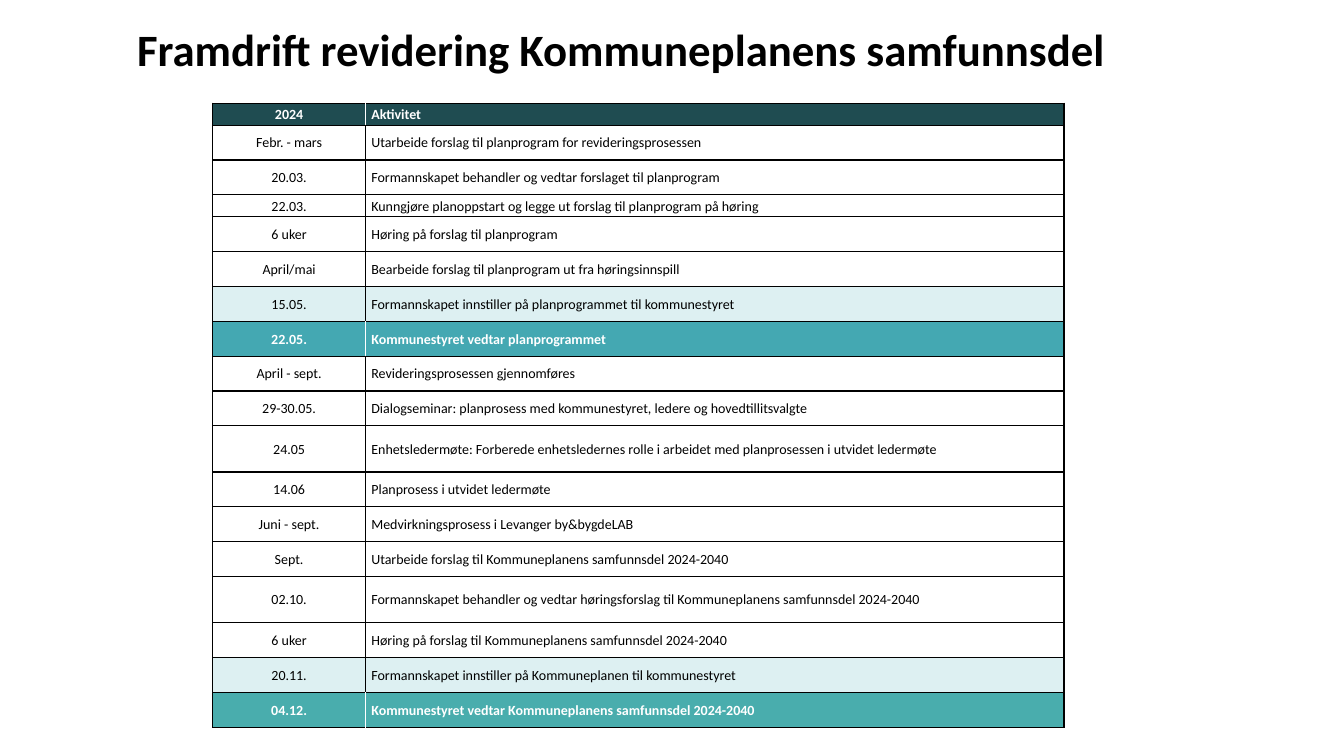
"""Builds a slide with the 2024 schedule for revising the municipal plan."""
from lxml import etree
from pptx import Presentation
from pptx.dml.color import RGBColor
from pptx.enum.text import MSO_ANCHOR, PP_ALIGN
from pptx.oxml.ns import qn
from pptx.util import Pt

MIDDLE = MSO_ANCHOR.MIDDLE
LEFT, CENTER = PP_ALIGN.LEFT, PP_ALIGN.CENTER
BLACK, WHITE = "000000", "FFFFFF"
DARK, PALE, TEAL, GREEN = "1F4C51", "DDF0F2", "44A8B2", "49ADAD"
LOW, NORMAL, HIGH = 15.7, 24.9, 33
COLUMN_WIDTHS = (109, 499)

SCHEDULE = [
    ("2024", "Aktivitet", LOW, DARK),
    ("Febr. - mars", "Utarbeide forslag til planprogram for revideringsprosessen", NORMAL, None),
    ("20.03.", "Formannskapet behandler og vedtar forslaget til planprogram", NORMAL, None),
    ("22.03.", "Kunngjøre planoppstart og legge ut forslag til planprogram på høring", LOW, None),
    ("6 uker", "Høring på forslag til planprogram", NORMAL, None),
    ("April/mai", "Bearbeide forslag til planprogram ut fra høringsinnspill", NORMAL, None),
    ("15.05.", "Formannskapet innstiller på planprogrammet til kommunestyret", NORMAL, PALE),
    ("22.05.", "Kommunestyret vedtar planprogrammet", NORMAL, TEAL),
    ("April - sept.", "Revideringsprosessen gjennomføres", NORMAL, None),
    ("29-30.05.", "Dialogseminar: planprosess med kommunestyret, ledere og hovedtillitsvalgte",
     NORMAL, None),
    ("24.05", "Enhetsledermøte: Forberede enhetsledernes rolle i arbeidet med planprosessen"
     " i utvidet ledermøte", HIGH, None),
    ("14.06", "Planprosess i utvidet ledermøte", NORMAL, None),
    ("Juni - sept.", "Medvirkningsprosess i Levanger by&bygdeLAB", NORMAL, None),
    ("Sept.", "Utarbeide forslag til Kommuneplanens samfunnsdel 2024-2040", NORMAL, None),
    ("02.10.", "Formannskapet behandler og vedtar høringsforslag til Kommuneplanens"
     " samfunnsdel 2024-2040", HIGH, None),
    ("6 uker", "Høring på forslag til Kommuneplanens samfunnsdel 2024-2040", NORMAL, None),
    ("20.11.", "Formannskapet innstiller på Kommuneplanen til kommunestyret", NORMAL, PALE),
    ("04.12.", "Kommunestyret vedtar Kommuneplanens samfunnsdel 2024-2040", NORMAL, GREEN),
]


def format_paragraph(para, size, color, bold, alignment, spacing):
    para.font.name = "Calibri"
    para.font.size = Pt(size)
    para.font.bold = bold
    para.font.color.rgb = RGBColor.from_string(color)
    para.alignment = alignment
    para.line_spacing = spacing


def add_border(cell, side, color):
    properties = cell._tc.get_or_add_tcPr()
    line = etree.SubElement(properties, qn(f"a:ln{side}"), w=str(Pt(1)))
    fill = etree.SubElement(line, qn("a:solidFill"))
    etree.SubElement(fill, qn("a:srgbClr"), val=color)


deck = Presentation()
deck.slide_width, deck.slide_height = Pt(960), Pt(540)
slide = deck.slides.add_slide(deck.slide_layouts[5])

title = slide.shapes.title
title.left, title.top, title.width, title.height = Pt(90.7), Pt(10), Pt(729.4), Pt(54)
title.text_frame.text = "Framdrift revidering Kommuneplanens samfunnsdel"
title.text_frame.vertical_anchor = MIDDLE
format_paragraph(title.text_frame.paragraphs[0], 32, BLACK, True, LEFT, 0.9)

table_height = sum(height for _, _, height, _ in SCHEDULE)
table = slide.shapes.add_table(len(SCHEDULE), 2, Pt(152), Pt(73.7),
                               Pt(sum(COLUMN_WIDTHS)), Pt(table_height)).table
table.first_row = table.horz_banding = False
for column, width in zip(table.columns, COLUMN_WIDTHS):
    column.width = Pt(width)

for row, (date, activity, height, fill_color) in zip(table.rows, SCHEDULE):
    row.height = Pt(height)
    strong = fill_color in (DARK, TEAL, GREEN)
    text_color = divider_color = WHITE if strong else BLACK
    cell_rules = (
        (date, CENTER, (BLACK, divider_color)),
        (activity, LEFT, (divider_color, BLACK)),
    )
    for cell, (text, alignment, side_colors) in zip(row.cells, cell_rules):
        cell.text = text
        cell.vertical_anchor = MIDDLE
        cell.margin_left = cell.margin_right = Pt(4.3)
        cell.margin_top = cell.margin_bottom = 0
        para = cell.text_frame.paragraphs[0]
        format_paragraph(para, 10, text_color, strong, alignment, 1.07)
        para.space_after = Pt(8)
        for side, color in zip("LRTB", (*side_colors, BLACK, BLACK)):
            add_border(cell, side, color)
        if fill_color:
            cell.fill.solid()
            cell.fill.fore_color.rgb = RGBColor.from_string(fill_color)
        else:
            cell.fill.background()

deck.save("out.pptx")
